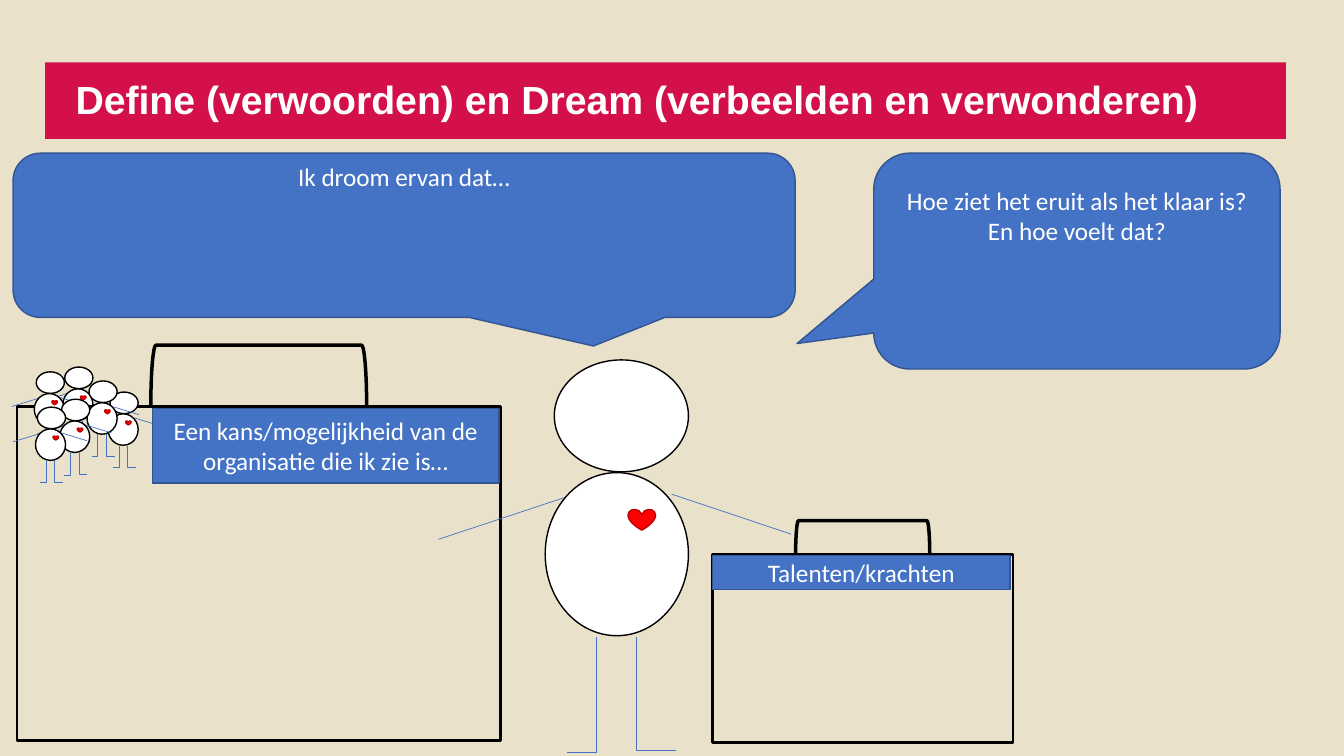
"""Build the Define and Dream slide with figures, suitcases and speech balloons."""
from lxml import etree
from pptx import Presentation
from pptx.dml.color import RGBColor
from pptx.enum.shapes import MSO_CONNECTOR, MSO_SHAPE
from pptx.enum.text import MSO_ANCHOR, MSO_AUTO_SIZE, PP_ALIGN
from pptx.oxml.ns import qn
from pptx.util import Cm, Pt

RECTANGLE = MSO_SHAPE.RECTANGLE
OVAL = MSO_SHAPE.OVAL
HEART = MSO_SHAPE.HEART
BRACKET = MSO_SHAPE.LEFT_BRACKET
BALLOON = MSO_SHAPE.ROUNDED_RECTANGULAR_CALLOUT
STRAIGHT = MSO_CONNECTOR.STRAIGHT
ELBOW = MSO_CONNECTOR.ELBOW
MIDDLE = MSO_ANCHOR.MIDDLE
TOP = MSO_ANCHOR.TOP

SAND = RGBColor(0xE9, 0xE1, 0xC9)
CRIMSON = RGBColor(0xD4, 0x10, 0x4B)
BLUE = RGBColor(0x44, 0x72, 0xC4)
DARK_BLUE = RGBColor(0x32, 0x54, 0x91)
RED = RGBColor(0xFF, 0x00, 0x00)
DARK_RED = RGBColor(0xC0, 0x00, 0x00)
WHITE = RGBColor(0xFF, 0xFF, 0xFF)
BLACK = RGBColor(0x00, 0x00, 0x00)

FIGURE_PARTS = [
    (OVAL, (2.92, 0, 3.38, 2.82), WHITE, BLACK),
    (OVAL, (2.69, 2.84, 3.61, 4.11), WHITE, BLACK),
    (HEART, (4.78, 3.76, 0.69, 0.53), RED, DARK_RED),
]
FIGURE_LIMBS = [
    (STRAIGHT, (3.23, 3.45, 0, 4.52)),
    (STRAIGHT, (5.87, 3.38, 8.89, 4.39)),
    (ELBOW, (3.99, 6.99, 3.23, 9.88)),
    (ELBOW, (5, 6.99, 5.99, 9.83)),
]
SMALL_SCALE = (0.21, 0.193)
CROWD = [(2.16, 9.88), (0.3, 9.37), (1.63, 9.6), (0.94, 10.06), (0.33, 10.26)]


def add_box(shapes, kind, box, fill=None, line=None, width=1):
    """Add a preset shape with plain fill and outline; box is in centimetres."""
    shape = shapes.add_shape(kind, *[Cm(length) for length in box])
    shape.shadow.inherit = False
    if fill is None:
        shape.fill.background()
    else:
        shape.fill.solid()
        shape.fill.fore_color.rgb = fill
    if line is None:
        shape.line.fill.background()
    else:
        shape.line.color.rgb = line
        shape.line.width = Pt(width)
    return shape


def add_limb(shapes, kind, ends):
    """Add a thin arm or a leg that drops before turning into a foot."""
    limb = shapes.add_connector(kind, *[Cm(length) for length in ends])
    limb.line.color.rgb = BLUE
    limb.line.width = Pt(0.5)
    properties = limb._element.spPr
    if kind == ELBOW:
        adjustments = properties.find(qn("a:prstGeom")).get_or_add_avLst()
        etree.SubElement(adjustments, qn("a:gd"), name="adj1", fmla="val 0")
    etree.SubElement(properties, qn("a:effectLst"))


def add_figure(shapes, left, top, scale=(1, 1)):
    """Add a standing figure with a heart at the given scale."""
    factors = scale * 2
    origin = (left, top)
    for kind, ends in FIGURE_LIMBS:
        add_limb(shapes, kind, [length * factor + start for length, factor, start
                                in zip(ends, factors, origin * 2)])
    for kind, box, fill, line in FIGURE_PARTS:
        add_box(shapes, kind, [length * factor + start for length, factor, start
                               in zip(box, factors, origin + (0, 0))], fill, line)


def add_suitcase(slide, case, handle):
    """Add an open case with a bracket turned upright as its handle."""
    shapes = slide.shapes.add_group_shape().shapes
    add_box(shapes, RECTANGLE, case, line=BLACK, width=2)
    left, top, width, height = handle
    shift = (width - height) / 2
    turned = (left + shift, top - shift, height, width)
    add_box(shapes, BRACKET, turned, line=BLACK, width=2.5).rotation = 90


def add_label(slide, kind, box, text, anchor=MIDDLE):
    """Add a blue shape with centred white text."""
    shape = add_box(slide.shapes, kind, box, BLUE, DARK_BLUE)
    frame = shape.text_frame
    frame.word_wrap = True
    frame.vertical_anchor = anchor
    paragraph = frame.paragraphs[0]
    paragraph.text = text
    paragraph.alignment = PP_ALIGN.CENTER
    paragraph.font.name = "Calibri"
    paragraph.font.size = Pt(18)
    paragraph.font.color.rgb = WHITE
    return shape


def add_balloon(slide, box, text, pointer, inset):
    """Add a speech balloon whose text starts at the top."""
    balloon = add_label(slide, BALLOON, box, text, TOP)
    balloon.text_frame.margin_top = Cm(inset)
    balloon.adjustments[0], balloon.adjustments[1] = pointer


def set_title(slide, text):
    """Place the title over its crimson bar."""
    bar = add_box(slide.shapes, RECTANGLE, (1.14, 1.57, 31.27, 1.93), CRIMSON)
    title = slide.shapes.title
    title._element.addprevious(bar._element)
    title.left, title.top = Cm(1.65), Cm(1.57)
    title.width, title.height = Cm(29.82), Cm(1.98)
    frame = title.text_frame
    frame.auto_size = MSO_AUTO_SIZE.NONE
    frame.word_wrap = True
    frame.vertical_anchor = MIDDLE
    paragraph = frame.paragraphs[0]
    paragraph.text = text
    paragraph.alignment = PP_ALIGN.LEFT
    paragraph.line_spacing = 0.9
    paragraph.font.name = "Arial"
    paragraph.font.size = Pt(28)
    paragraph.font.bold = True
    paragraph.font.color.rgb = WHITE


def main():
    """Build and save the slide."""
    presentation = Presentation()
    presentation.slide_width, presentation.slide_height = Cm(33.87), Cm(19.05)
    slide = presentation.slides.add_slide(presentation.slide_layouts[5])
    slide.background.fill.solid()
    slide.background.fill.fore_color.rgb = SAND

    set_title(slide, "Define (verwoorden) en Dream (verbeelden en verwonderen)")
    add_balloon(slide, (0.33, 3.86, 19.71, 4.14), "Ik droom ervan dat…",
                (0.242, 0.674), 0)
    add_figure(slide.shapes.add_group_shape().shapes, 1.02, 9.25, SMALL_SCALE)
    add_suitcase(slide, (17.96, 13.97, 7.57, 4.75), (20.05, 13.12, 3.38, 0.86))
    add_suitcase(slide, (0.43, 10.24, 12.19, 8.43), (3.8, 8.7, 5.44, 1.55))
    add_label(slide, RECTANGLE, (17.96, 14, 7.49, 0.86), "Talenten/krachten")
    add_figure(slide.shapes.add_group_shape().shapes, 11.05, 9.07)
    add_balloon(slide, (22.02, 3.86, 10.24, 5.44),
                "Hoe ziet het eruit als het klaar is? En hoe voelt dat?",
                (-0.689, 0.382), 0.55)
    crowd = slide.shapes.add_group_shape().shapes
    for left, top in CROWD:
        add_figure(crowd, left, top, SMALL_SCALE)
    add_label(slide, RECTANGLE, (3.84, 10.29, 8.74, 1.88),
              "Een kans/mogelijkheid van de organisatie die ik zie is…")
    presentation.save("out.pptx")


if __name__ == "__main__":
    main()
